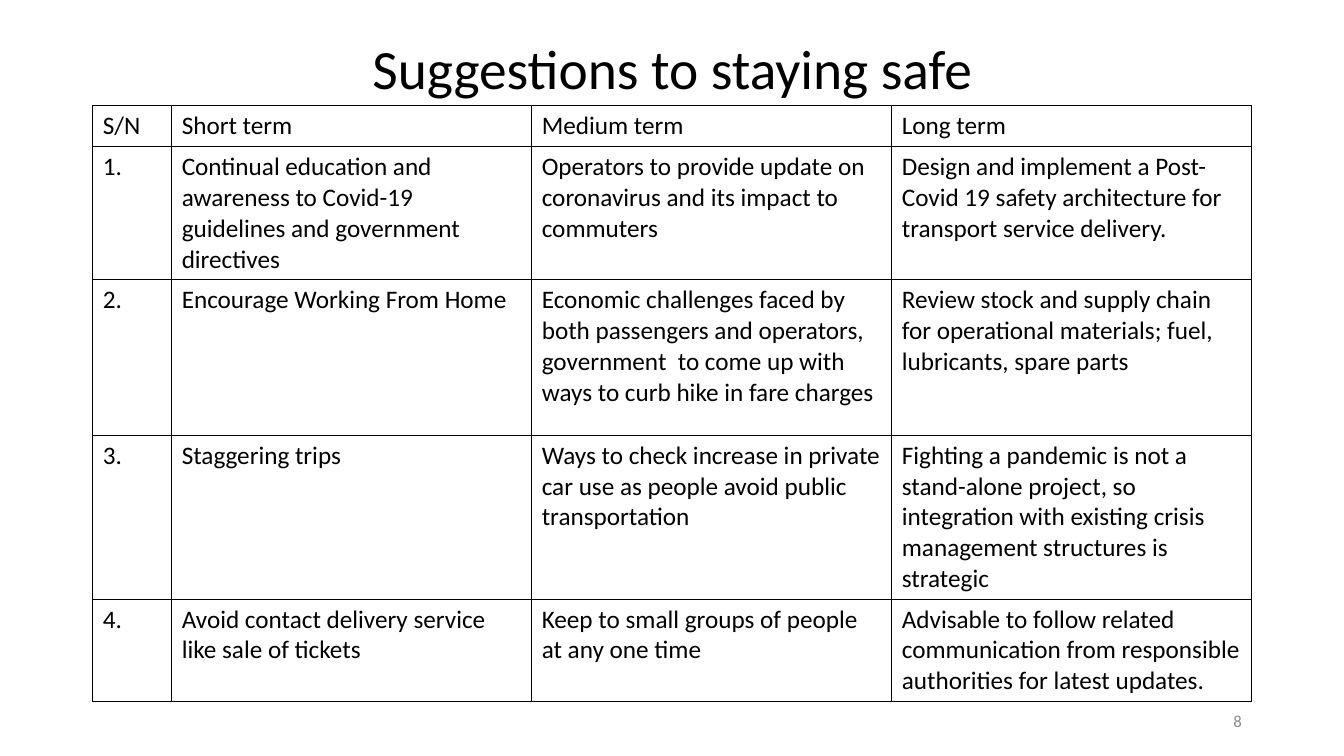
"""Build the slide of suggestions to staying safe."""
from dataclasses import dataclass

from lxml.etree import SubElement
from pptx import Presentation
from pptx.dml.color import RGBColor
from pptx.enum.text import MSO_ANCHOR, MSO_AUTO_SIZE, PP_ALIGN
from pptx.oxml.ns import qn
from pptx.slide import Slide
from pptx.table import _Cell
from pptx.text.text import TextFrame
from pptx.util import Pt


@dataclass(frozen=True)
class Theme:
    font: str = "Calibri"
    ink: str = "000000"
    muted: str = "8C8C8C"
    title_size: float = 39.6
    body_size: float = 18
    number_size: float = 12
    border_width: float = 1


@dataclass(frozen=True)
class Row:
    height: float
    number: str
    short_term: str
    medium_term: str
    long_term: str

    def texts(self) -> tuple[str, ...]:
        return self.number, self.short_term, self.medium_term, self.long_term


THEME = Theme()
LEFT, TABLE_TOP, WIDTH = 66.24, 75.6, 828
NUMBER_WIDTH = 56.4
TERM_WIDTH = (WIDTH - NUMBER_WIDTH) / 3
ROWS = (
    Row(29.2, "S/N", "Short term", "Medium term", "Long term"),
    Row(94.9, "1.",
        "Continual education and awareness to Covid-19 guidelines and government directives",
        "Operators to provide update on coronavirus and its impact to commuters",
        "Design and implement a Post-Covid 19 safety architecture for transport service delivery."),
    Row(111, "2.",
        "Encourage Working From Home",
        "Economic challenges faced by both passengers and operators, "
        "government  to come up with ways to curb hike in fare charges",
        "Review stock and supply chain for operational materials; fuel, lubricants, spare parts"),
    Row(117, "3.",
        "Staggering trips",
        "Ways to check increase in private car use as people avoid public transportation",
        "Fighting a pandemic is not a stand-alone project, so integration with "
        "existing crisis management structures is strategic"),
    Row(73, "4.",
        "Avoid contact delivery service like sale of tickets",
        "Keep to small groups of people at any one time",
        "Advisable to follow related communication from responsible authorities "
        "for latest updates."),
)


def write(frame: TextFrame, text: str, *, size: float = THEME.body_size,
          color: str = THEME.ink, align: PP_ALIGN = PP_ALIGN.LEFT,
          anchor: MSO_ANCHOR = MSO_ANCHOR.TOP, spacing: float = 1.0) -> None:
    frame.text = text
    frame.word_wrap = True
    frame.vertical_anchor = anchor
    paragraph = frame.paragraphs[0]
    paragraph.alignment = align
    paragraph.line_spacing = spacing
    paragraph.font.name = THEME.font
    paragraph.font.size = Pt(size)
    paragraph.font.color.rgb = RGBColor.from_string(color)


def outline(cell: _Cell) -> None:
    properties = cell._tc.get_or_add_tcPr()
    for side in ("lnL", "lnR", "lnT", "lnB"):
        line = SubElement(properties, qn(f"a:{side}"), w=str(Pt(THEME.border_width)))
        fill = SubElement(line, qn("a:solidFill"))
        SubElement(fill, qn("a:srgbClr"), val=THEME.ink)
    cell.fill.background()


def add_title(slide: Slide) -> None:
    title = slide.shapes.title
    title.left, title.top, title.width, title.height = Pt(LEFT), Pt(28.8), Pt(WIDTH), Pt(44.64)
    write(title.text_frame, "Suggestions to staying safe", size=THEME.title_size,
          align=PP_ALIGN.CENTER, anchor=MSO_ANCHOR.MIDDLE, spacing=0.9)
    title.text_frame.auto_size = MSO_AUTO_SIZE.NONE


def add_suggestions(slide: Slide) -> None:
    widths = (NUMBER_WIDTH, TERM_WIDTH, TERM_WIDTH, TERM_WIDTH)
    suggestions = slide.shapes.add_table(
        len(ROWS), len(widths), Pt(LEFT), Pt(TABLE_TOP), Pt(WIDTH),
        Pt(sum(row.height for row in ROWS))).table
    suggestions.first_row = suggestions.horz_banding = False
    for column, width in zip(suggestions.columns, widths):
        column.width = Pt(width)
    for table_row, row in zip(suggestions.rows, ROWS):
        table_row.height = Pt(row.height)
        for cell, text in zip(table_row.cells, row.texts()):
            write(cell.text_frame, text)
            outline(cell)


def add_page_number(slide: Slide) -> None:
    page_number = slide.shapes.add_textbox(Pt(678.24), Pt(500.4), Pt(216), Pt(28.8))
    write(page_number.text_frame, "8", size=THEME.number_size, color=THEME.muted,
          align=PP_ALIGN.RIGHT, anchor=MSO_ANCHOR.MIDDLE)


def main() -> None:
    presentation = Presentation()
    presentation.slide_width, presentation.slide_height = Pt(960), Pt(540)
    slide = presentation.slides.add_slide(presentation.slide_layouts[5])
    add_title(slide)
    add_suggestions(slide)
    add_page_number(slide)
    presentation.save("out.pptx")


if __name__ == "__main__":
    main()
